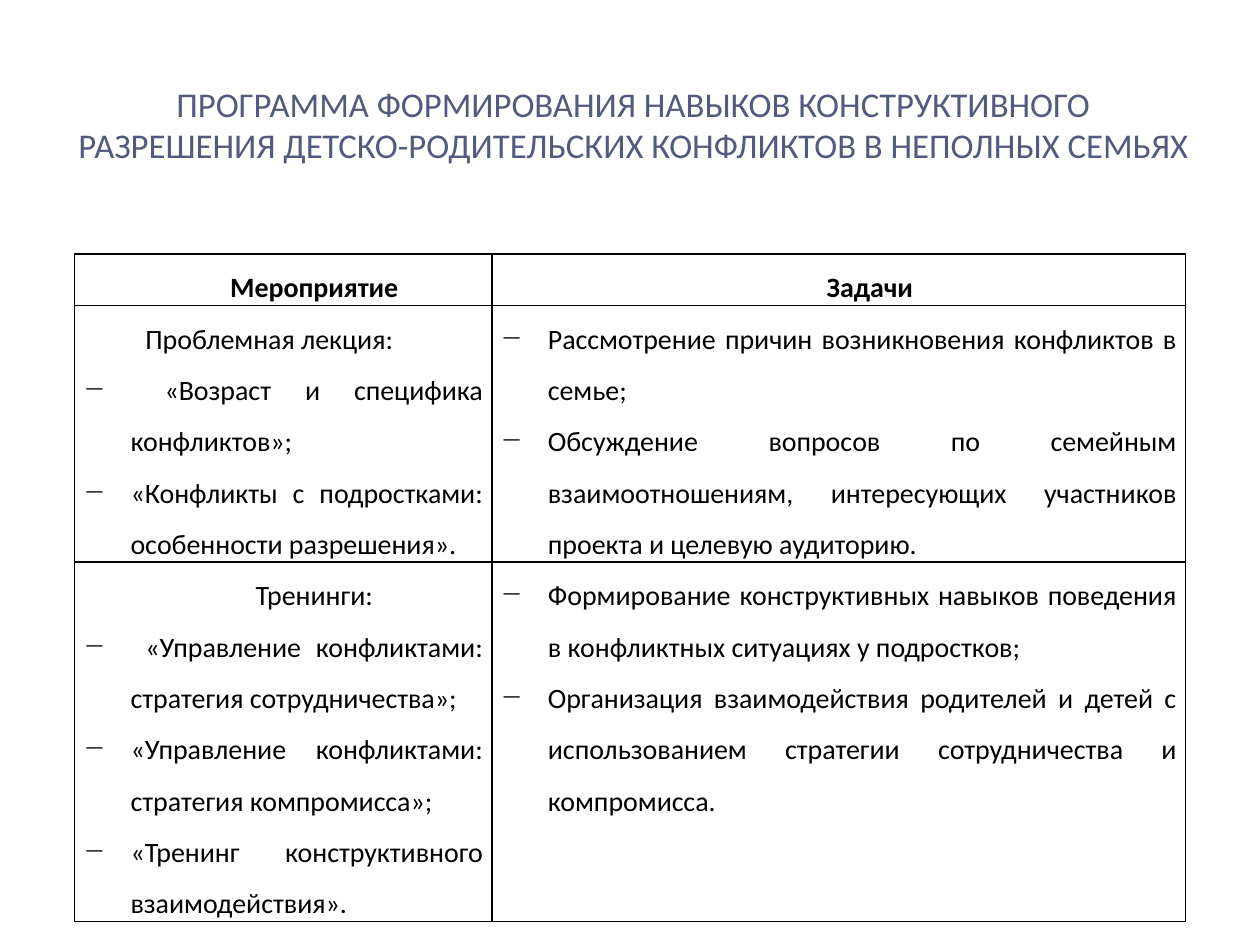
from lxml import etree
from pptx import Presentation
from pptx.dml.color import RGBColor
from pptx.enum.shapes import MSO_SHAPE
from pptx.enum.text import MSO_ANCHOR, MSO_AUTO_SIZE, PP_ALIGN
from pptx.oxml.ns import qn
from pptx.util import Pt

CENTER, JUSTIFY = PP_ALIGN.CENTER, PP_ALIGN.JUSTIFY
MIDDLE = MSO_ANCHOR.MIDDLE
NO_AUTOFIT = MSO_AUTO_SIZE.NONE
RECTANGLE, ROUNDED = MSO_SHAPE.RECTANGLE, MSO_SHAPE.ROUNDED_RECTANGLE
TITLE_ONLY = 5

COLORS = {"title": "525B7E", "text": "000000", "border": "000000",
          "panel": "FFFFFF"}
FONT = "Calibri"
BULLET = "−"
FIRST_LINE = 35.5
HANGING = 27

TITLE = ("ПРОГРАММА ФОРМИРОВАНИЯ НАВЫКОВ КОНСТРУКТИВНОГО "
         "РАЗРЕШЕНИЯ ДЕТСКО-РОДИТЕЛЬСКИХ КОНФЛИКТОВ В НЕПОЛНЫХ СЕМЬЯХ")
COLUMN_WIDTHS = (238.5, 396.5)
ROW_HEIGHTS = (19.5, 134, 191.5)
HEADINGS = ("Мероприятие", "Задачи")
# Each row: lead line, its alignment, activities, tasks
PROGRAM = (
    ("Проблемная лекция:", JUSTIFY,
     (" «Возраст и специфика конфликтов»;",
      "«Конфликты с подростками: особенности разрешения»."),
     ("Рассмотрение причин возникновения конфликтов в семье;",
      "Обсуждение вопросов по семейным взаимоотношениям, интересующих "
      "участников проекта и целевую аудиторию.")),
    ("Тренинги:", CENTER,
     (" «Управление конфликтами: стратегия сотрудничества»;",
      "«Управление конфликтами: стратегия компромисса»;",
      "«Тренинг конструктивного взаимодействия»."),
     ("Формирование конструктивных навыков поведения в конфликтных "
      "ситуациях у подростков;",
      "Организация взаимодействия родителей и детей с использованием "
      "стратегии сотрудничества и компромисса.")),
)


def write_paragraph(text_frame, text, size=16, color="text", bold=False,
                    align=JUSTIFY, spacing=1.5, margin=0, indent=0, bullet=None):
    """Fill the empty first paragraph, or add one after the others."""
    paragraph = text_frame.paragraphs[0]
    if paragraph.runs:
        paragraph = text_frame.add_paragraph()
    paragraph.alignment = align
    paragraph.line_spacing = spacing
    paragraph.space_before = paragraph.space_after = Pt(0)
    properties = paragraph._p.get_or_add_pPr()
    properties.set("marL", str(Pt(margin)))
    properties.set("indent", str(Pt(indent)))
    if bullet:
        etree.SubElement(properties, qn("a:buChar")).set("char", bullet)
    run = paragraph.add_run()
    run.text = text
    run.font.name = FONT
    run.font.size = Pt(size)
    run.font.bold = bold
    run.font.color.rgb = RGBColor.from_string(COLORS[color])


def write_bullets(cell, items):
    for item in items:
        write_paragraph(cell.text_frame, item, margin=HANGING,
                        indent=-HANGING, bullet=BULLET)


def add_panel(slide, kind, left, top, width, height, opacity=100):
    shape = slide.shapes.add_shape(kind, Pt(left), Pt(top), Pt(width), Pt(height))
    shape.shadow.inherit = False
    shape.fill.solid()
    shape.fill.fore_color.rgb = RGBColor.from_string(COLORS["panel"])
    shape.line.fill.background()
    if opacity < 100:
        color = shape._element.spPr.find(f"{qn('a:solidFill')}/{qn('a:srgbClr')}")
        etree.SubElement(color, qn("a:alpha")).set("val", str(opacity * 1000))
    return shape


def add_background_panels(slide):
    card = add_panel(slide, ROUNDED, 7, 8, 706, 525)
    card.adjustments[0] = 0.017
    add_panel(slide, RECTANGLE, 21.6, 21.6, 676.8, 104.4, opacity=83)
    add_panel(slide, RECTANGLE, 29.5, 29.5, 660.5, 88)
    # The title placeholder belongs in front of the panels
    slide.shapes._spTree.append(slide.shapes.title._element)


def add_borders(cell, width=1):
    properties = cell._tc.get_or_add_tcPr()
    for position, side in enumerate(("a:lnL", "a:lnR", "a:lnT", "a:lnB")):
        line = etree.Element(qn(side), w=str(Pt(width)))
        fill = etree.SubElement(line, qn("a:solidFill"))
        etree.SubElement(fill, qn("a:srgbClr")).set("val", COLORS["border"])
        properties.insert(position, line)


def format_cell(cell):
    cell.margin_left = cell.margin_right = Pt(5)
    cell.margin_top = cell.margin_bottom = Pt(0)
    cell.fill.background()
    add_borders(cell)


def format_title(slide):
    title = slide.shapes.title
    title.left, title.top = Pt(36.7), Pt(49)
    title.width, title.height = Pt(650.2), Pt(82)
    text_frame = title.text_frame
    text_frame.auto_size = NO_AUTOFIT
    text_frame.word_wrap = True
    text_frame.vertical_anchor = MIDDLE
    text_frame.margin_top = Pt(0)
    text_frame.margin_bottom = Pt(38)
    write_paragraph(text_frame, TITLE, size=19.8, color="title",
                    align=CENTER, spacing=1.0)


def add_program_table(slide):
    frame = slide.shapes.add_table(
        len(ROW_HEIGHTS), len(COLUMN_WIDTHS), Pt(42.6), Pt(145.1),
        Pt(sum(COLUMN_WIDTHS)), Pt(sum(ROW_HEIGHTS)))
    table = frame.table
    table.first_row = table.horz_banding = False
    for column, width in zip(table.columns, COLUMN_WIDTHS):
        column.width = Pt(width)
    for row, height in zip(table.rows, ROW_HEIGHTS):
        row.height = Pt(height)
    for cell in table.iter_cells():
        format_cell(cell)

    for index, heading in enumerate(HEADINGS):
        write_paragraph(table.cell(0, index).text_frame, heading, bold=True,
                        align=CENTER, indent=FIRST_LINE)
    for index, (lead, align, activities, tasks) in enumerate(PROGRAM, start=1):
        activity_cell = table.cell(index, 0)
        write_paragraph(activity_cell.text_frame, lead, align=align,
                        indent=FIRST_LINE)
        write_bullets(activity_cell, activities)
        write_bullets(table.cell(index, 1), tasks)


def main():
    presentation = Presentation()
    presentation.slide_width, presentation.slide_height = Pt(720), Pt(540)
    slide = presentation.slides.add_slide(presentation.slide_layouts[TITLE_ONLY])
    add_background_panels(slide)
    format_title(slide)
    add_program_table(slide)
    presentation.save("out.pptx")


if __name__ == "__main__":
    main()
